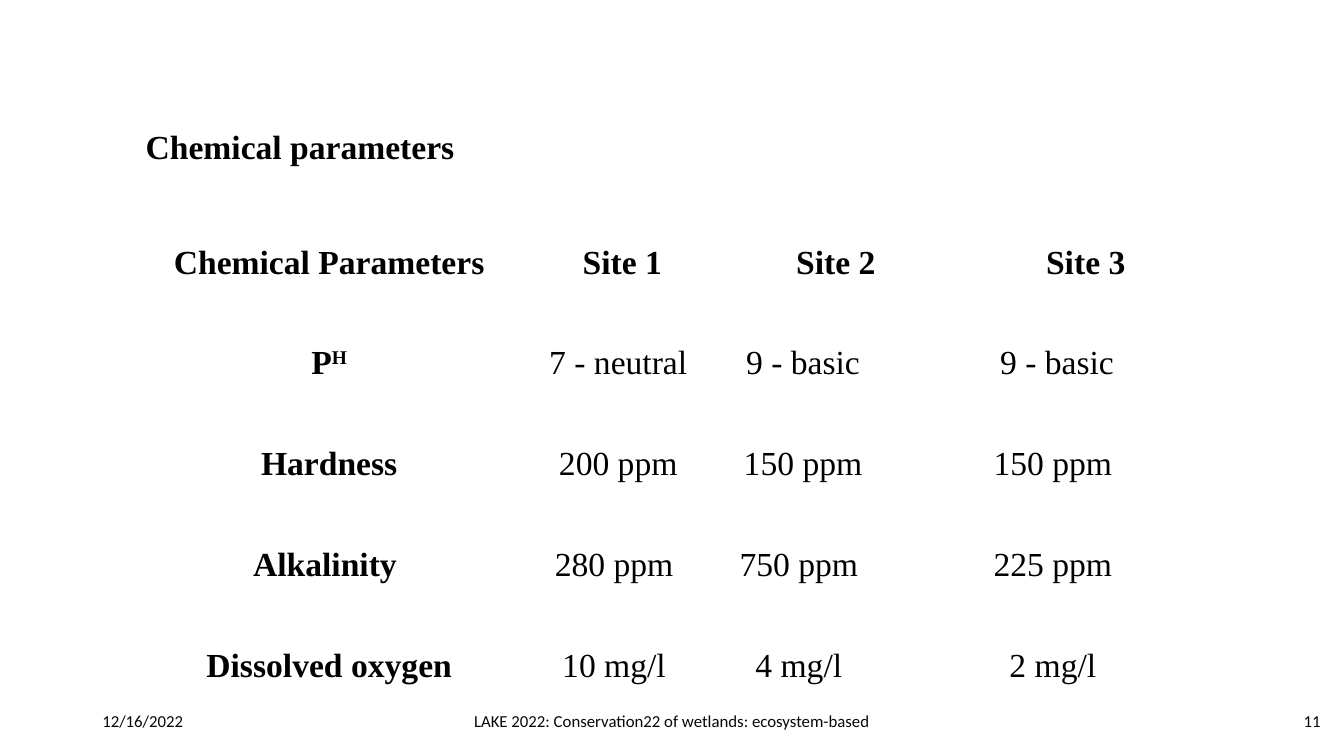
from pptx import Presentation
from pptx.dml.color import RGBColor
from pptx.enum import text
from pptx.util import Pt

COLORS = {"ink": "000000", "footer": "080808", "paper": "FFFFFF"}
LEFT, CENTER, RIGHT = text.PP_ALIGN.LEFT, text.PP_ALIGN.CENTER, text.PP_ALIGN.RIGHT
BODY = {"name": "Times New Roman", "size": Pt(24), "bold": False}
STRONG = {**BODY, "bold": True}
FOOTER = {"name": "Calibri", "size": Pt(12)}

COLUMNS = [283, 124, 140, 223]
ROW_HEIGHT = 72
CELL_MARGIN = 5
ROWS = [
    ["Chemical Parameters", "Site 1", "Site 2", "Site 3"],
    ["P", "7 - neutral", "9 - basic", "9 - basic"],
    ["Hardness", "200 ppm", "150 ppm", "150 ppm"],
    ["Alkalinity", "280 ppm", "750 ppm", "225 ppm"],
    ["Dissolved oxygen", "10 mg/l", "4 mg/l", "2 mg/l"],
]
# Extra left margin that moves the centred text of a cell, by (row, column)
INDENTS = {(0, 1): 12, (0, 2): 53, (0, 3): 47,
           (1, 1): 6, (1, 2): 6, (1, 3): 6, (2, 1): 6, (2, 2): 6}
FOOTERS = [
    ("12/16/2022", 66, 216, LEFT),
    ("LAKE 2022: Conservation22 of wetlands: ecosystem-based", 318, 324, CENTER),
    ("11", 734.4, 216, RIGHT),
]


def set_attrs(target, values):
    for name, value in values.items():
        setattr(target, name, value)


def add_run(p, content, font, color):
    r = p.add_run()
    r.text = content
    set_attrs(r.font, font)
    r.font.color.rgb = RGBColor.from_string(COLORS[color])
    return r


def fill_title(s):
    title = s.shapes.title
    set_attrs(title, {"left": Pt(104), "top": Pt(90),
                      "width": Pt(398), "height": Pt(29)})
    tf = title.text_frame
    set_attrs(tf, {"margin_left": 0, "margin_top": 0, "margin_right": 0,
                   "margin_bottom": 0, "word_wrap": True,
                   "vertical_anchor": text.MSO_ANCHOR.TOP,
                   "auto_size": text.MSO_AUTO_SIZE.NONE})
    p = tf.paragraphs[0]
    p.alignment = LEFT
    add_run(p, "Chemical parameters", STRONG, "ink")


def fill_cell(cell, content, font, indent, filled):
    set_attrs(cell, {"margin_left": Pt(CELL_MARGIN + indent),
                     "margin_right": Pt(CELL_MARGIN),
                     "margin_top": 0, "margin_bottom": 0})
    if filled:
        cell.fill.solid()
        cell.fill.fore_color.rgb = RGBColor.from_string(COLORS["paper"])
    else:
        cell.fill.background()
    p = cell.text_frame.paragraphs[0]
    set_attrs(p, {"alignment": CENTER, "line_spacing": 2.5})
    add_run(p, content, font, "ink")
    return p


def add_parameter_table(s):
    frame = s.shapes.add_table(len(ROWS), len(COLUMNS), Pt(93.6), Pt(134.6),
                               Pt(sum(COLUMNS)), Pt(ROW_HEIGHT * len(ROWS)))
    table = frame.table
    set_attrs(table, {"first_row": False, "horz_banding": False})
    for column, width in zip(table.columns, COLUMNS):
        column.width = Pt(width)
    for i, row in enumerate(ROWS):
        table.rows[i].height = Pt(ROW_HEIGHT)
        for j, content in enumerate(row):
            font = STRONG if i == 0 or j == 0 else BODY
            fill_cell(table.cell(i, j), content, font,
                      INDENTS.get((i, j), 0), filled=i == 1 and j > 0)
    table.cell(3, 0).margin_right = Pt(CELL_MARGIN + 6)
    ph = table.cell(1, 0).text_frame.paragraphs[0]
    r = add_run(ph, "H", STRONG, "ink")
    r.font._element.set("baseline", "30000")


def add_footer(s, content, left, width, alignment):
    tf = s.shapes.add_textbox(Pt(left), Pt(500.4), Pt(width), Pt(28.8)).text_frame
    set_attrs(tf, {"word_wrap": True, "vertical_anchor": text.MSO_ANCHOR.MIDDLE})
    p = tf.paragraphs[0]
    p.alignment = alignment
    add_run(p, content, FOOTER, "footer")


def main():
    prs = Presentation()
    set_attrs(prs, {"slide_width": Pt(960), "slide_height": Pt(540)})
    s = prs.slides.add_slide(prs.slide_layouts.get_by_name("Title Only"))
    fill_title(s)
    add_parameter_table(s)
    for footer in FOOTERS:
        add_footer(s, *footer)
    prs.save("out.pptx")


if __name__ == "__main__":
    main()
